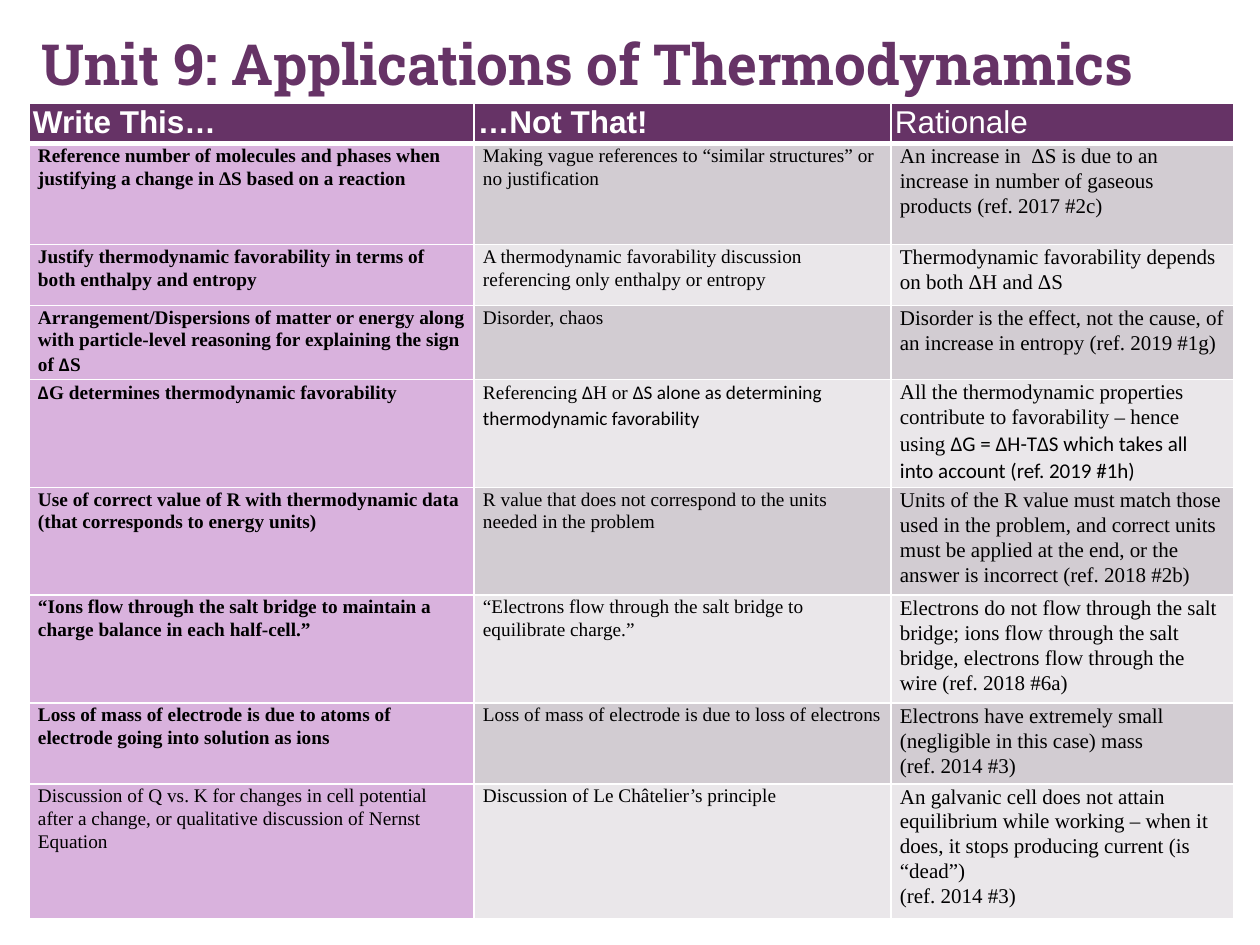
import pptx
import pptx.util
import pptx.enum.text
import pptx.dml.color
import pptx.oxml
import pptx.oxml.ns

PX = 914400 // 126
COLORS = {
    "plum": "663366", "lilac": "D9B2DD", "dark": "D2CCD2",
    "light": "EAE7EA", "white": "FFFFFF", "black": "000000",
}
SERIF, SANS, HEAD, SLAB = "Times New Roman", "Calibri", "Arial", "Roboto Slab"

TITLE = "Unit 9: Applications of Thermodynamics"
# Text between tildes is set in the sans font; a line break starts a paragraph.
ROWS = [
    ("Write This…", "…Not That!", "Rationale"),
    ("Reference number of molecules and phases when justifying a change in ΔS based on a reaction",
     "Making vague references to “similar structures” or no justification",
     "An increase in  ΔS is due to an increase in number of gaseous products (ref. 2017 #2c)"),
    ("Justify thermodynamic favorability in terms of both enthalpy and entropy",
     "A thermodynamic favorability discussion referencing only enthalpy or entropy",
     "Thermodynamic favorability depends on both ΔH and ΔS"),
    ("Arrangement/Dispersions of matter or energy along with particle-level reasoning "
     "for explaining the sign of ~Δ~S",
     "Disorder, chaos",
     "Disorder is the effect, not the cause, of an increase in entropy (ref. 2019 #1g)"),
    ("~Δ~G determines thermodynamic favorability",
     "Referencing ~Δ~H or ~ΔS alone as determining thermodynamic favorability~",
     "All the thermodynamic properties contribute to favorability – hence using "
     "~ΔG = ΔH-TΔS which takes all into account (ref. 2019 #1h)~"),
    ("Use of correct value of R with thermodynamic data (that corresponds to energy units)",
     "R value that does not correspond to the units needed in the problem",
     "Units of the R value must match those used in the problem, and correct units "
     "must be applied at the end, or the answer is incorrect (ref. 2018 #2b)"),
    ("“Ions flow through the salt bridge to maintain a charge balance in each half-cell.”",
     "“Electrons flow through the salt bridge to equilibrate charge.”",
     "Electrons do not flow through the salt bridge; ions flow through the salt bridge, "
     "electrons flow through the wire (ref. 2018 #6a)"),
    ("Loss of mass of electrode is due to atoms of electrode going into solution as ions",
     "Loss of mass of electrode is due to loss of electrons",
     "Electrons have extremely small (negligible in this case) mass\n(ref. 2014 #3)"),
    ("Discussion of Q vs. K for changes in cell potential after a change, "
     "or qualitative discussion of Nernst Equation",
     "Discussion of Le Châtelier’s principle",
     "An galvanic cell does not attain equilibrium while working – when it does, "
     "it stops producing current (is “dead”)\n(ref. 2014 #3)"),
]
LEFT, TOP = 29, 103
WIDTHS = [445, 417, 343]
HEIGHTS = [40, 101, 61, 74, 105, 99, 99, 74, 124]
SIZES = [11, 11, 12]


def rgb(name):
    return pptx.dml.color.RGBColor.from_string(COLORS[name])


def add_run(para, text, face, size, color, bold):
    run = para.add_run()
    run.text = text
    font = run.font
    font.name, font.size, font.bold = face, pptx.util.Pt(size), bold
    font.color.rgb = rgb(color)


def add_edges(cell, row):
    """Draw white cell borders, thick below the header row."""
    props = cell._tc.get_or_add_tcPr()
    thick = {"T": row == 1, "B": row == 0}
    for side in "LRTB":
        width = 3 if thick.get(side) else 1
        props.append(pptx.oxml.parse_xml(
            f'<a:ln{side} {pptx.oxml.ns.nsdecls("a")} w="{width * 12700}">'
            f'<a:solidFill><a:srgbClr val="{COLORS["white"]}"/></a:solidFill></a:ln{side}>'))


def fill_cell(cell, row, col, text):
    head = row == 0
    pad = 4 if head else 9
    cell.margin_left = cell.margin_right = pad * PX
    cell.margin_top = cell.margin_bottom = 0
    add_edges(cell, row)
    band = "dark" if row % 2 else "light"
    cell.fill.solid()
    cell.fill.fore_color.rgb = rgb("plum" if head else "lilac" if col == 0 else band)

    if head:
        face, size, color, bold = HEAD, 18, "white", col < 2
    else:
        face, size, color = SERIF, SIZES[col], "black"
        bold = col == 0 and row < len(ROWS) - 1
    frame = cell.text_frame
    for i, line in enumerate(text.split("\n")):
        para = frame.add_paragraph() if i else frame.paragraphs[0]
        para.line_spacing = 1.07
        for j, part in enumerate(line.split("~")):
            if part:
                add_run(para, part, SANS if j % 2 else face, size, color, bold)


def add_title(slide):
    box = slide.shapes.add_textbox(LEFT * PX, 21 * PX, 1157 * PX, 83 * PX)
    frame = box.text_frame
    frame.word_wrap = True
    frame.vertical_anchor = pptx.enum.text.MSO_ANCHOR.MIDDLE
    add_run(frame.paragraphs[0], TITLE, SLAB, 32.4, "plum", True)


def add_grid(slide):
    table = slide.shapes.add_table(
        len(ROWS), len(WIDTHS), LEFT * PX, TOP * PX,
        sum(WIDTHS) * PX, sum(HEIGHTS) * PX).table
    table.horz_banding = False
    for col, width in zip(table.columns, WIDTHS):
        col.width = width * PX
    for row, height in zip(table.rows, HEIGHTS):
        row.height = height * PX
    for r, texts in enumerate(ROWS):
        for c, text in enumerate(texts):
            fill_cell(table.cell(r, c), r, c, text)


def main():
    deck = pptx.Presentation()
    deck.slide_width, deck.slide_height = 1260 * PX, 945 * PX
    slide = deck.slides.add_slide(deck.slide_layouts[6])
    add_title(slide)
    add_grid(slide)
    deck.save("out.pptx")


if __name__ == "__main__":
    main()
